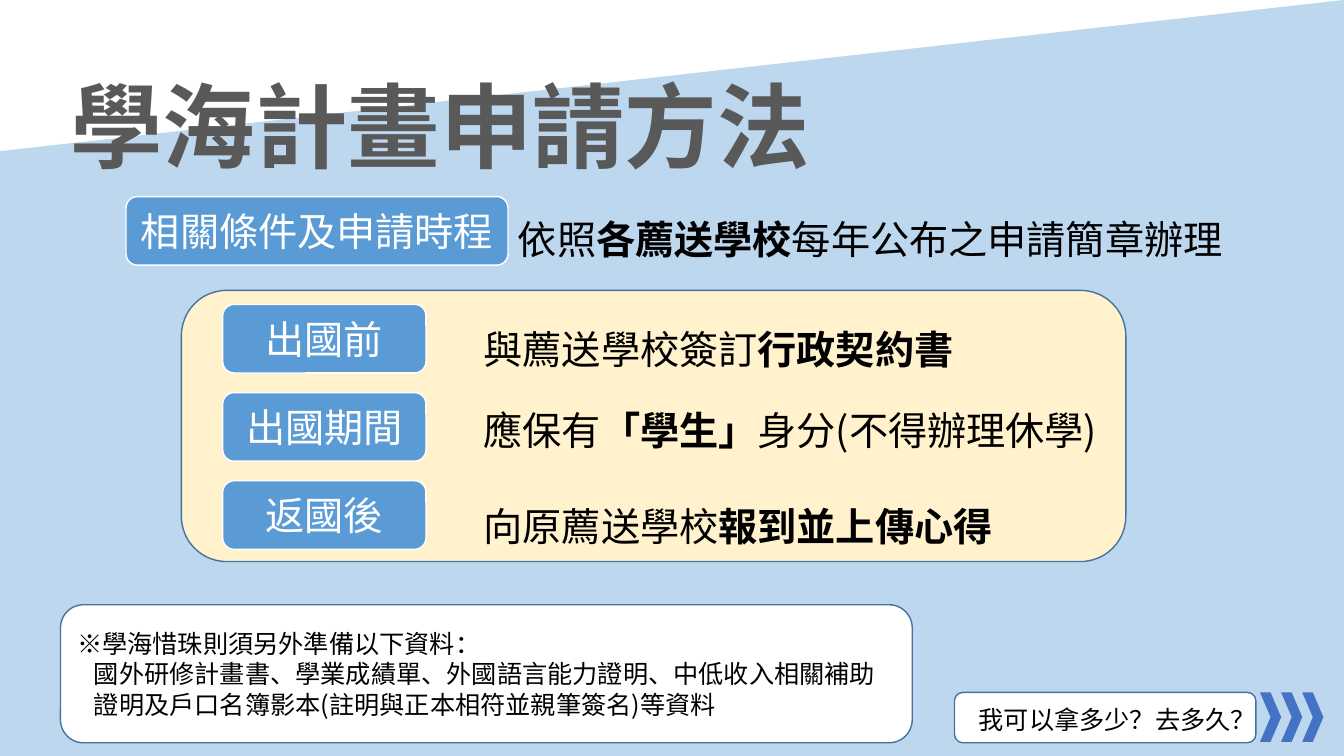
from lxml import etree
from pptx import Presentation
from pptx import util as u
from pptx.dml.color import RGBColor
from pptx.enum import shapes, text
from pptx.oxml import ns

FONT = "Noto Sans CJK SC"
rgb = RGBColor.from_string
Kind = shapes.MSO_SHAPE
Align = text.PP_ALIGN
Anchor = text.MSO_ANCHOR


def write(shape, paragraphs, size=28, color="000000", align=Align.LEFT,
          anchor=Anchor.TOP, spacing=1.0, wrap=True, indents=()):
    """Fill a shape with paragraphs, each a list of (wording, bold) runs."""
    frame = shape.text_frame
    frame.word_wrap = wrap
    frame.vertical_anchor = anchor
    for i, runs in enumerate(paragraphs):
        paragraph = frame.paragraphs[0] if i == 0 else frame.add_paragraph()
        paragraph.alignment = align
        paragraph.line_spacing = spacing
        if indents:
            paragraph._p.get_or_add_pPr().set("marL", str(u.Pt(indents[i])))
        for wording, bold in runs:
            run = paragraph.add_run()
            run.text = wording
            font = run.font
            font.size, font.bold, font.name = u.Pt(size), bold, FONT
            font.color.rgb = rgb(color)
            east_asian = etree.Element(ns.qn("a:ea"), typeface=FONT)
            run._r.rPr.find(ns.qn("a:latin")).addnext(east_asian)


def add_panel(kind, box, fill, line=None):
    panel = slide.shapes.add_shape(kind, *map(u.Pt, box))
    panel.shadow.inherit = False
    panel.fill.solid()
    panel.fill.fore_color.rgb = rgb(fill)
    if line:
        panel.line.color.rgb = rgb(line)
        panel.line.width = u.Pt(1)
    else:
        panel.line.fill.background()
    return panel


deck = Presentation()
deck.slide_width, deck.slide_height = u.Pt(960), u.Pt(540)
slide = deck.slides.add_slide(deck.slide_layouts[5])

# Slanted background, with the title brought in front of it
add_panel(Kind.FLOWCHART_MANUAL_INPUT, (0, 0, 960, 540), "BDD7EE")
title = slide.shapes.title
title.element.getparent().append(title.element)
title.left, title.top, title.width, title.height = map(u.Pt, (43.2, 46, 548, 87))
write(title, [[("學海計畫申請方法", True)]], size=66, color="595959", wrap=False)

# White and cream panels
stages_panel = add_panel(Kind.ROUNDED_RECTANGLE, (129.6, 207.4, 674.6, 193.7), "FFF2CC", "43739E")
documents = add_panel(Kind.ROUNDED_RECTANGLE, (43.2, 432, 608.4, 98.6), "FFFFFF", "43739E")
next_panel = add_panel(Kind.ROUNDED_RECTANGLE, (681.8, 494.6, 215.3, 36), "FFFFFF", "43739E")

# Blue labels: the schedule, then the three stages at an equal pitch
labels = [("相關條件及申請時程", 90, 140.4, 272.9)]
for i, stage in enumerate(["出國前", "出國期間", "返國後"]):
    labels.append((stage, 159.1, 217.4 + 63 * i, 145.2))
for wording, left, top, width in labels:
    label = add_panel(Kind.ROUNDED_RECTANGLE, (left, top, width, 49), "5B9BD5", "FFFFFF")
    write(label, [[(wording, False)]], color="FFFFFF", align=Align.CENTER, anchor=Anchor.MIDDLE)

# Explanations beside the labels
explanations = [
    ((362.9, 133.2, 530.6, 58), 1.5,
     [("依照", False), ("各薦送學校", True), ("每年公布之申請簡章辦理", False)]),
    ((338.4, 211.7, 452.9, 58), 1.5,
     [("與薦送學校簽訂", False), ("行政契約書", True)]),
    ((338.4, 286.6, 491.8, 41), 1.0,
     [("應保有", False), ("「學生」", True), ("身分(不得辦理休學)", False)]),
    ((338.4, 338.4, 452.9, 58), 1.5,
     [("向原薦送學校", False), ("報到並上傳心得", True)]),
]
for box, spacing, runs in explanations:
    explanation = slide.shapes.add_textbox(*map(u.Pt, box))
    write(explanation, [runs], spacing=spacing)

# Extra documents
document_lines = [
    "※學海惜珠則須另外準備以下資料：",
    "國外研修計畫書、學業成績單、外國語言能力證明、中低收入相關補助",
    "證明及戶口名簿影本(註明與正本相符並親筆簽名)等資料",
]
write(documents, [[(line, False)] for line in document_lines],
      size=18, anchor=Anchor.MIDDLE, indents=(0, 12, 12))

# Lead-in to the next slide
question = slide.shapes.add_textbox(*map(u.Pt, (688.3, 499.7, 201.6, 29)))
write(question, [[("我可以拿多少？去多久？", False)]], size=18, align=Align.CENTER)
for i in range(3):
    add_panel(Kind.CHEVRON, (900 + 15.1 * i, 494.6, 15.1, 35.3), "4472C4")

deck.save("out.pptx")
